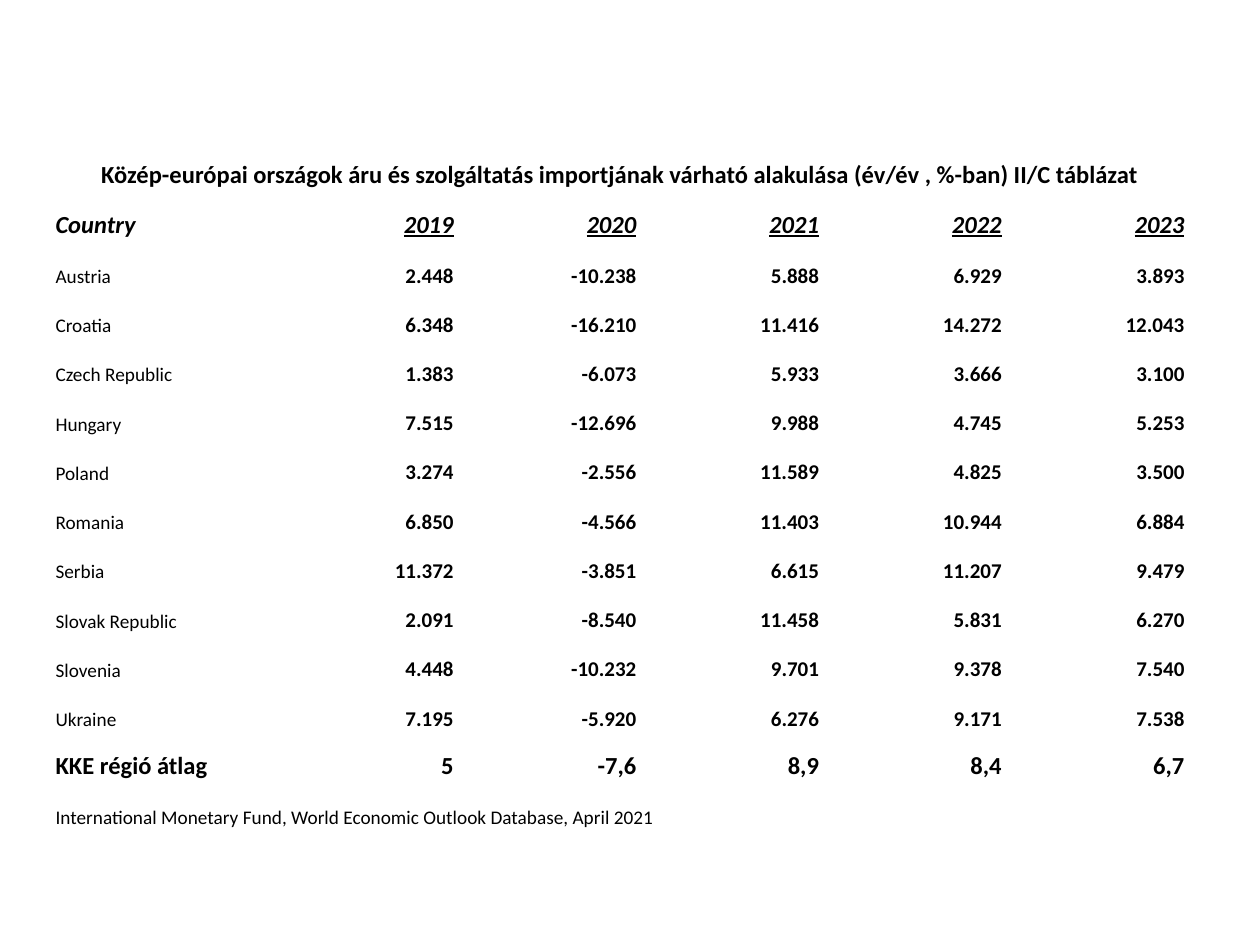
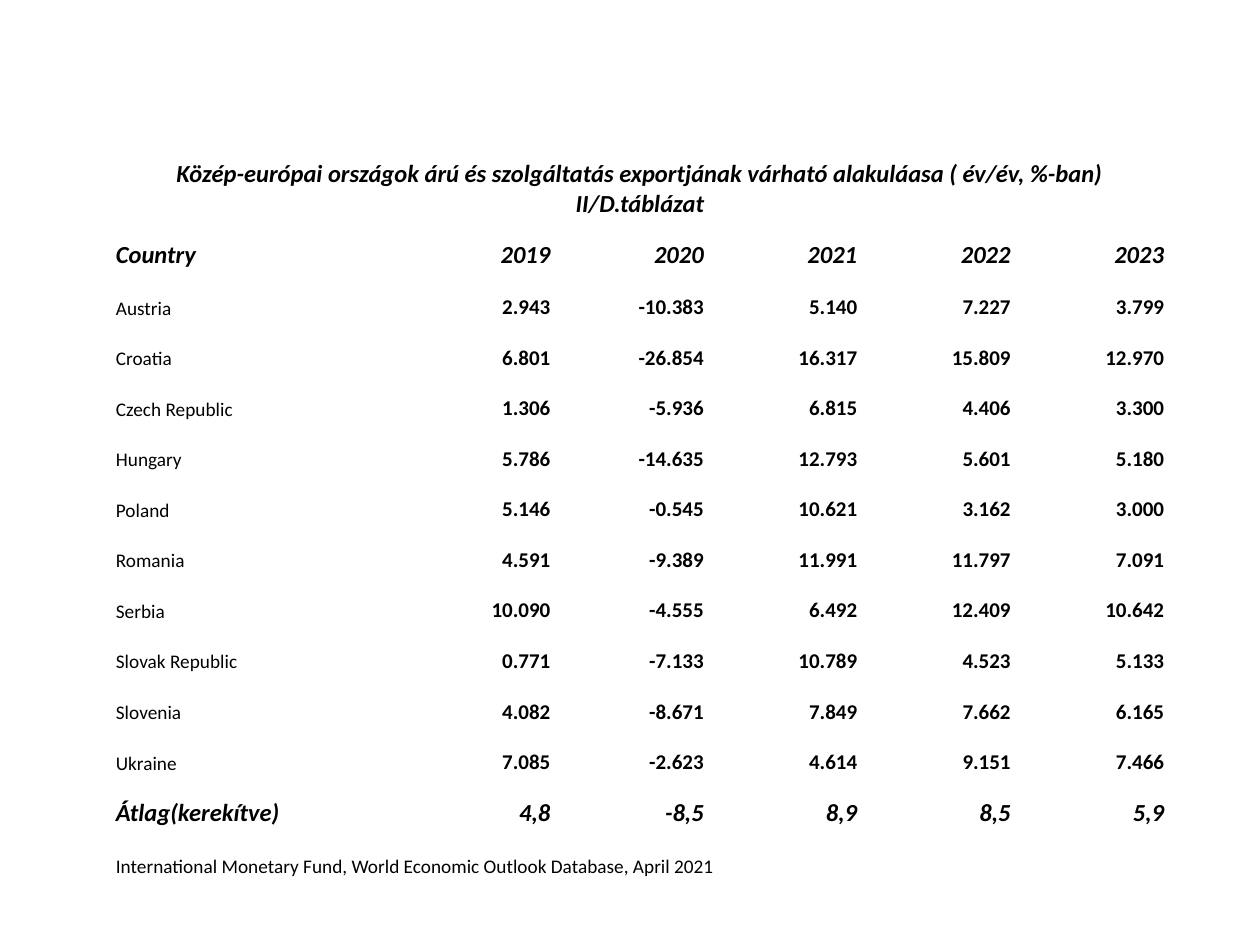
from pptx import Presentation
from pptx.dml.color import RGBColor
from pptx.enum.text import MSO_ANCHOR, PP_ALIGN
from pptx.util import Pt

COLORS = {"text": "000000"}
FONT = "Calibri"
INSET = Pt(0.72)
TITLE_HEIGHT = 54
HEADER = ["Country", "2019", "2020", "2021", "2022", "2023"]
SOURCE = "International Monetary Fund, World Economic Outlook Database, April 2021"

IMPORTS = {
    "title": "Közép-európai országok áru és szolgáltatás importjának várható "
             "alakulása (év/év , %-ban) II/C táblázat",
    "rows": [
        ["Austria", "2.448", "-10.238", "5.888", "6.929", "3.893"],
        ["Croatia", "6.348", "-16.210", "11.416", "14.272", "12.043"],
        ["Czech Republic", "1.383", "-6.073", "5.933", "3.666", "3.100"],
        ["Hungary", "7.515", "-12.696", "9.988", "4.745", "5.253"],
        ["Poland", "3.274", "-2.556", "11.589", "4.825", "3.500"],
        ["Romania", "6.850", "-4.566", "11.403", "10.944", "6.884"],
        ["Serbia", "11.372", "-3.851", "6.615", "11.207", "9.479"],
        ["Slovak Republic", "2.091", "-8.540", "11.458", "5.831", "6.270"],
        ["Slovenia", "4.448", "-10.232", "9.701", "9.378", "7.540"],
        ["Ukraine", "7.195", "-5.920", "6.276", "9.171", "7.538"],
    ],
    "average": ["KKE régió átlag", "5", "-7,6", "8,9", "8,4", "6,7"],
    "box": (31, 54.8, 646.5, 419.7),
    "country_width": 124.5,
    "average_height": 28.13,
    "source_span": 5,
    "italic": False,
    "underline_years": True,
}

EXPORTS = {
    "title": "Közép-európai országok árú és szolgáltatás exportjának várható "
             "alakuláasa ( év/év, %-ban) II/D.táblázat",
    "rows": [
        ["Austria", "2.943", "-10.383", "5.140", "7.227", "3.799"],
        ["Croatia", "6.801", "-26.854", "16.317", "15.809", "12.970"],
        ["Czech Republic", "1.306", "-5.936", "6.815", "4.406", "3.300"],
        ["Hungary", "5.786", "-14.635", "12.793", "5.601", "5.180"],
        ["Poland", "5.146", "-0.545", "10.621", "3.162", "3.000"],
        ["Romania", "4.591", "-9.389", "11.991", "11.797", "7.091"],
        ["Serbia", "10.090", "-4.555", "6.492", "12.409", "10.642"],
        ["Slovak Republic", "0.771", "-7.133", "10.789", "4.523", "5.133"],
        ["Slovenia", "4.082", "-8.671", "7.849", "7.662", "6.165"],
        ["Ukraine", "7.085", "-2.623", "4.614", "9.151", "7.466"],
    ],
    "average": ["Átlag(kerekítve)", "4,8", "-8,5", "8,9", "8,5", "5,9"],
    "box": (65.5, 71.3, 600.5, 430.8),
    "country_width": 162,
    "average_height": 30,
    "source_span": 6,
    "italic": True,
    "underline_years": False,
}


def write_cell(cell, text, size, bold=False, italic=False, underline=False,
               align=PP_ALIGN.LEFT):
    p = cell.text_frame.paragraphs[0]
    if text:
        p.add_run().text = text
    p.alignment = align
    f = p.font
    f.name, f.size = FONT, Pt(size)
    f.bold, f.italic, f.underline = bold, italic, underline
    f.color.rgb = RGBColor.from_string(COLORS["text"])


def write_row(tbl, row, values, label_style, value_style):
    write_cell(tbl.cell(row, 0), values[0], **label_style)
    for col, value in enumerate(values[1:], 1):
        write_cell(tbl.cell(row, col), value, align=PP_ALIGN.RIGHT, **value_style)


def size_table(tbl, box, country_width, average_height):
    width, height = box[2:]
    cols, rows = list(tbl.columns), list(tbl.rows)
    cols[0].width = Pt(country_width)
    for col in cols[1:]:
        col.width = Pt((width - country_width) / (len(cols) - 1))
    for row in rows:
        row.height = Pt((height - TITLE_HEIGHT - average_height) / (len(rows) - 2))
    rows[0].height = Pt(TITLE_HEIGHT)
    rows[-2].height = Pt(average_height)


def add_outlook_slide(prs, data):
    s = prs.slides.add_slide(prs.slide_layouts[6])
    body = data["rows"]
    last = len(body) + 3
    tbl = s.shapes.add_table(last + 1, len(HEADER), *map(Pt, data["box"])).table
    tbl.first_row = tbl.horz_banding = False
    size_table(tbl, data["box"], data["country_width"], data["average_height"])
    for cell in tbl.iter_cells():
        cell.fill.background()
        cell.vertical_anchor = MSO_ANCHOR.BOTTOM
        cell.margin_left = cell.margin_right = cell.margin_top = INSET
        cell.margin_bottom = 0

    strong = {"size": 14, "bold": True, "italic": data["italic"]}
    header = {**strong, "italic": True}
    years = {**header, "underline": data["underline_years"]}
    plain = {"size": 11}

    tbl.cell(0, 0).merge(tbl.cell(0, len(HEADER) - 1))
    write_cell(tbl.cell(0, 0), data["title"], align=PP_ALIGN.CENTER, **strong)
    write_row(tbl, 1, HEADER, header, years)
    for row, values in enumerate(body, 2):
        write_row(tbl, row, values, plain, {"size": 12, "bold": True})
    write_row(tbl, last - 1, data["average"], strong, strong)
    tbl.cell(last, 0).merge(tbl.cell(last, data["source_span"] - 1))
    write_cell(tbl.cell(last, 0), SOURCE, **plain)


def main():
    prs = Presentation()
    prs.slide_width, prs.slide_height = Pt(720), Pt(540)
    for data in (IMPORTS, EXPORTS):
        add_outlook_slide(prs, data)
    prs.save("out.pptx")


if __name__ == "__main__":
    main()
